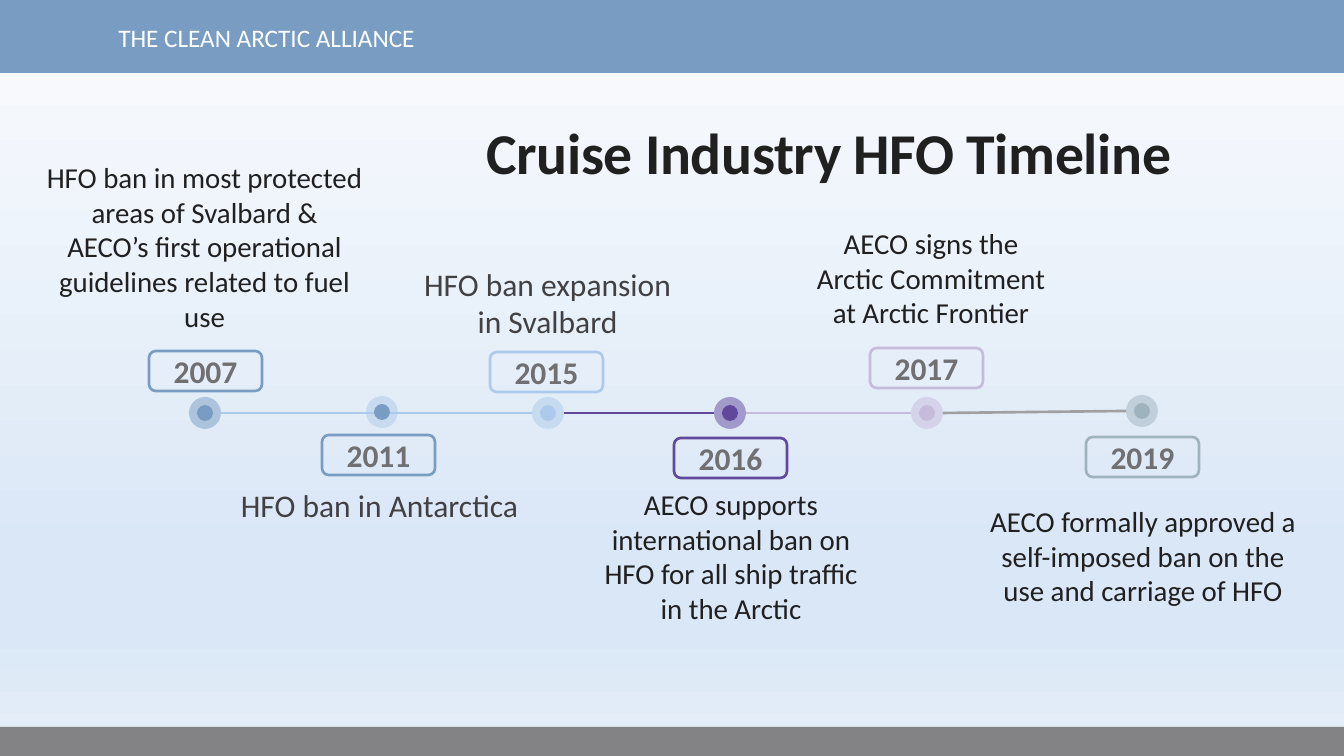
from dataclasses import dataclass

from lxml.etree import SubElement
from pptx import Presentation
from pptx.dml.color import RGBColor
from pptx.enum.shapes import MSO_CONNECTOR, MSO_SHAPE
from pptx.enum.text import MSO_ANCHOR as Anchor, PP_ALIGN as Align
from pptx.oxml.ns import qn
from pptx.util import Pt

EMU_PER_PX = 9676
WIDTH, HEIGHT = 1344, 756
DOT, CORE = 32, 16
BADGE_W, BADGE_H = 113, 40


@dataclass(frozen=True)
class Theme:
    font: str = "Calibri"
    blue: str = "789CC2"
    sky: str = "ADCAEA"
    purple: str = "60489D"
    lilac: str = "C7BBDC"
    slate: str = "9EB3BE"
    line_gray: str = "A09FA1"
    footer: str = "838285"
    ink: str = "202021"
    soft_ink: str = "414042"
    year_ink: str = "706F72"
    white: str = "FFFFFF"
    backdrop: tuple = ((0, "FBFCFE"), (74, "DAE7F6"), (83, "DAE7F6"), (100, "E6EFF9"))
    title_size: float = 44
    large: float = 24
    body: float = 22
    header_size: float = 19.2
    stroke: float = 2


def px(*lengths):
    return [length * EMU_PER_PX for length in lengths]


def write(frame, text, *, size, color, font, bold=False, align=Align.CENTER,
          anchor=Anchor.TOP, spacing=None, tracking=None):
    """Fill a text frame; each line of text becomes a paragraph."""
    frame.word_wrap = True
    frame.vertical_anchor = anchor
    for number, line in enumerate(text.split("\n")):
        paragraph = frame.add_paragraph() if number else frame.paragraphs[0]
        paragraph.alignment = align
        if spacing:
            paragraph.line_spacing = spacing
        run = paragraph.add_run()
        run.text = line
        run.font.name, run.font.size, run.font.bold = font, Pt(size), bold
        run.font.color.rgb = RGBColor.from_string(color)
        if tracking:
            run.font._element.set("spc", str(tracking))


class TimelineSlide:
    def __init__(self, slide, theme):
        self.slide, self.theme = slide, theme

    def background(self):
        fill = self.slide.background.fill
        fill.gradient()
        fill.gradient_angle = 270
        stops = self.slide.element.xpath(".//a:gsLst")[0]
        for stop in list(stops):
            stops.remove(stop)
        for percent, color in self.theme.backdrop:
            stop = SubElement(stops, qn("a:gs"), pos=str(percent * 1000))
            SubElement(stop, qn("a:srgbClr"), val=color)

    def shape(self, kind, box, fill=None, line=None, alpha=None, parent=None):
        shape = (parent or self.slide).shapes.add_shape(kind, *px(*box))
        shape.shadow.inherit = False
        if fill:
            shape.fill.solid()
            shape.fill.fore_color.rgb = RGBColor.from_string(fill)
        else:
            shape.fill.background()
        if line:
            shape.line.color.rgb = RGBColor.from_string(line)
            shape.line.width = Pt(self.theme.stroke)
        else:
            shape.line.fill.background()
        if alpha:
            color = shape.fill._xPr.find(".//" + qn("a:srgbClr"))
            SubElement(color, qn("a:alpha"), val=str(alpha * 1000))
        return shape

    def band(self, top, height, color):
        self.shape(MSO_SHAPE.RECTANGLE, (0, top, WIDTH, height), color)

    def segment(self, start, end, color):
        line = self.slide.shapes.add_connector(MSO_CONNECTOR.STRAIGHT, *px(*start, *end))
        line.line.color.rgb = RGBColor.from_string(color)
        line.line.width = Pt(self.theme.stroke)
        SubElement(line._element.spPr, qn("a:effectLst"))

    def dot(self, x, y, halo, core):
        """Draw a solid core inside a half-transparent halo, centred on x, y."""
        group = self.slide.shapes.add_group_shape()
        for size, color, alpha in ((DOT, halo, 50), (CORE, core, None)):
            box = (x - size // 2, y - size // 2, size, size)
            self.shape(MSO_SHAPE.OVAL, box, color, alpha=alpha, parent=group)

    def badge(self, left, top, year, color):
        box = (left, top, BADGE_W, BADGE_H)
        badge = self.shape(MSO_SHAPE.ROUNDED_RECTANGLE, box, line=color)
        write(badge.text_frame, year, size=self.theme.large, color=self.theme.year_ink,
              font=self.theme.font, bold=True, anchor=Anchor.MIDDLE)

    def text(self, box, text, **style):
        frame = self.slide.shapes.add_textbox(*px(*box)).text_frame
        write(frame, text, font=self.theme.font, **style)


def main():
    theme = Theme()
    deck = Presentation()
    deck.slide_width, deck.slide_height = px(WIDTH, HEIGHT)
    page = TimelineSlide(deck.slides.add_slide(deck.slide_layouts[6]), theme)

    page.background()
    page.band(0, 73, theme.blue)
    page.band(727, 29, theme.footer)
    page.text((109, 18, 700, 41), "THE CLEAN ARCTIC ALLIANCE", size=theme.header_size,
              color=theme.white, align=Align.LEFT)
    page.text((453, 101, 752, 109), "Cruise Industry HFO Timeline", size=theme.title_size,
              color=theme.ink, bold=True, anchor=Anchor.MIDDLE, spacing=0.9, tracking=-30)

    # year: dot centre, halo, core, badge corner
    milestones = {
        "2007": ((205, 413), theme.blue, theme.blue, (149, 351)),
        "2011": ((382, 412), theme.sky, theme.blue, (322, 435)),
        "2015": ((548, 413), theme.sky, theme.sky, (490, 352)),
        "2016": ((730, 413), theme.purple, theme.purple, (674, 438)),
        "2017": ((927, 413), theme.lilac, theme.lilac, (870, 348)),
        "2019": ((1142, 411), theme.slate, theme.slate, (1086, 437)),
    }
    segments = (
        ("2007", "2015", theme.sky),
        ("2015", "2016", theme.purple),
        ("2016", "2017", theme.lilac),
        ("2017", "2019", theme.line_gray),
    )
    for first, last, color in segments:
        (x1, y1), (x2, y2) = milestones[first][0], milestones[last][0]
        page.segment((x1 + DOT // 2, y1), (x2 - DOT // 2, y2), color)
    for year, (centre, halo, core, corner) in milestones.items():
        page.dot(*centre, halo, core)
        page.badge(*corner, year, core)

    body = dict(size=theme.body, color=theme.ink)
    large = dict(size=theme.large, color=theme.soft_ink)
    events = (
        ((36, 155, 337, 184), "HFO ban in most protected areas of Svalbard &\n"
         "AECO’s first operational guidelines related to fuel use", body),
        ((231, 481, 297, 47), "HFO ban in Antarctica", large),
        ((409, 260, 277, 86), "HFO ban expansion in Svalbard", large),
        ((593, 482, 276, 149), "AECO supports international ban on HFO "
         "for all ship traffic in the Arctic", body),
        ((805, 221, 252, 114), "AECO signs the Arctic Commitment at Arctic Frontier", body),
        ((978, 499, 330, 114), "AECO formally approved a self-imposed ban "
         "on the use and carriage of HFO", body),
    )
    for box, event, style in events:
        page.text(box, event, **style)

    deck.save("out.pptx")


if __name__ == "__main__":
    main()
